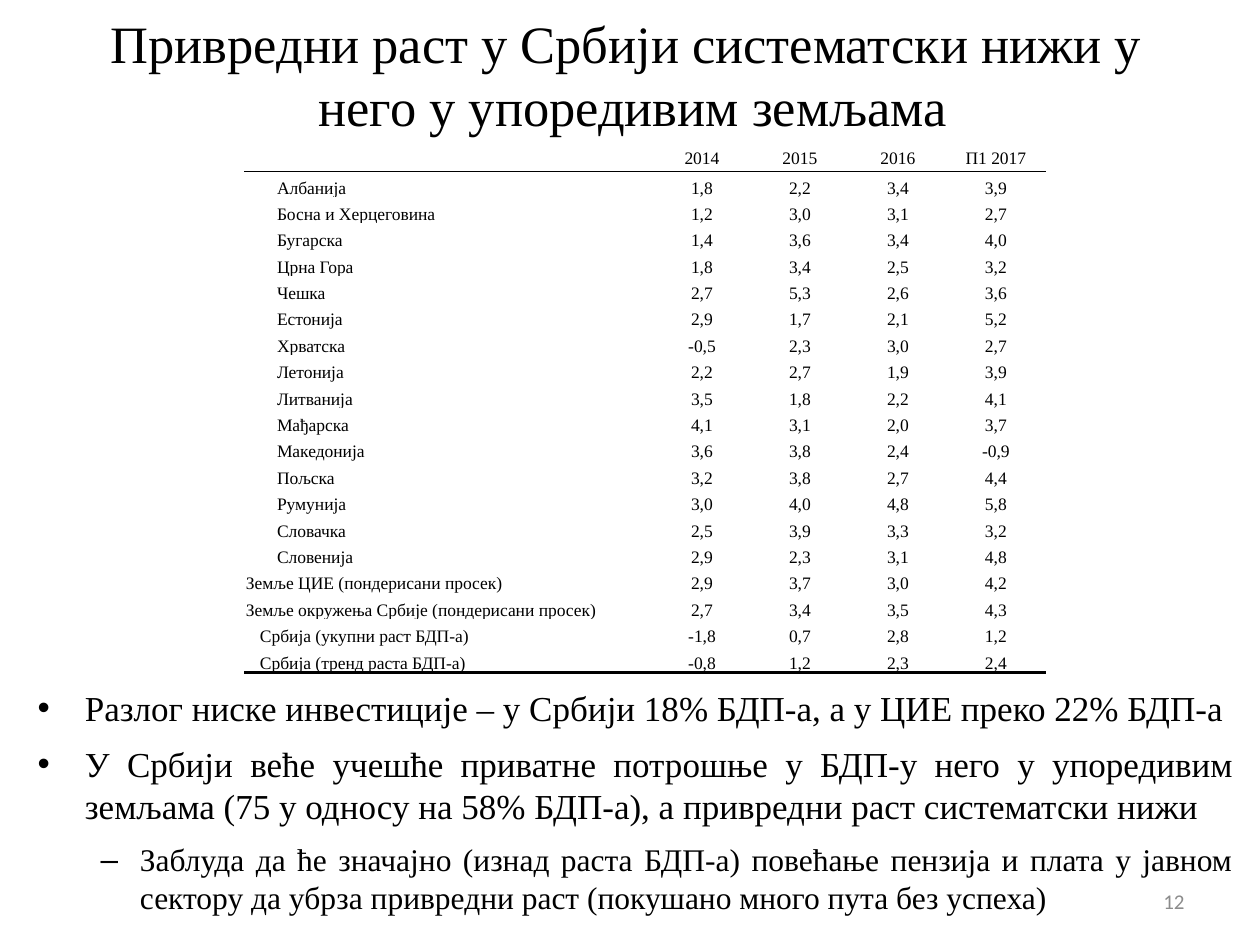
from lxml import etree
from pptx import Presentation
from pptx.dml.color import RGBColor
from pptx.enum.text import MSO_ANCHOR, MSO_AUTO_SIZE, PP_ALIGN
from pptx.oxml.ns import qn
from pptx.util import Pt

LEFT, CENTER, RIGHT, JUSTIFY = PP_ALIGN.LEFT, PP_ALIGN.CENTER, PP_ALIGN.RIGHT, PP_ALIGN.JUSTIFY
TOP, MIDDLE, BOTTOM = MSO_ANCHOR.TOP, MSO_ANCHOR.MIDDLE, MSO_ANCHOR.BOTTOM
PX = 914400 // 126

THEME = {
    "text": "000000", "paper": "FFFFFF", "muted": "8C8C8C",
    "serif": "Times New Roman", "sans": "Calibri",
    "title": 30, "bullets": [20, 18], "table": 10, "number": 12,
    "thin": 0.5, "thick": 2,
}

HEADER = ["", "2014", "2015", "2016", "П1 2017"]
COUNTRIES = [
    ("Албанија", "1,8 2,2 3,4 3,9"),
    ("Босна и Херцеговина", "1,2 3,0 3,1 2,7"),
    ("Бугарска", "1,4 3,6 3,4 4,0"),
    ("Црна Гора", "1,8 3,4 2,5 3,2"),
    ("Чешка", "2,7 5,3 2,6 3,6"),
    ("Естонија", "2,9 1,7 2,1 5,2"),
    ("Хрватска", "-0,5 2,3 3,0 2,7"),
    ("Летонија", "2,2 2,7 1,9 3,9"),
    ("Литванија", "3,5 1,8 2,2 4,1"),
    ("Мађарска", "4,1 3,1 2,0 3,7"),
    ("Македонија", "3,6 3,8 2,4 -0,9"),
    ("Пољска", "3,2 3,8 2,7 4,4"),
    ("Румунија", "3,0 4,0 4,8 5,8"),
    ("Словачка", "2,5 3,9 3,3 3,2"),
    ("Словенија", "2,9 2,3 3,1 4,8"),
]
AVERAGES = [
    ("Земље ЦИЕ (пондерисани просек)", "2,9 3,7 3,0 4,2"),
    ("Земље окружења Србије (пондерисани просек)", "2,7 3,4 3,5 4,3"),
]
SERBIA = [
    ("Србија (укупни раст БДП-а)", "-1,8 0,7 2,8 1,2"),
    ("Србија (тренд раста БДП-а)", "-0,8 1,2 2,3 2,4"),
]
BULLETS = [
    (0, "Разлог ниске инвестиције – у Србији 18% БДП-а, а у ЦИЕ преко 22% БДП-а"),
    (0, "У Србији веће учешће приватне потрошње у БДП-у него у упоредивим земљама "
        "(75 у односу на 58% БДП-а), а привредни раст систематски нижи"),
    (1, "Заблуда да ће значајно (изнад раста БДП-а) повећање пензија и плата у јавном "
        "сектору да убрза привредни раст (покушано много пута без успеха)"),
]


def write(p, text, size, align, font="serif", color="text"):
    p.text = text
    p.alignment = align
    for r in p.runs:
        r.font.size = Pt(size)
        r.font.name = THEME[font]
        r.font.color.rgb = RGBColor.from_string(THEME[color])


def rule(cell, side, width):
    """Draw one cell border; side is lnT or lnB."""
    ln = etree.Element(qn("a:" + side), w=str(Pt(width)))
    fill = etree.SubElement(ln, qn("a:solidFill"))
    etree.SubElement(fill, qn("a:srgbClr"), val=THEME["text"])
    cell._tc.get_or_add_tcPr().insert(0, ln)


prs = Presentation()
prs.slide_width, prs.slide_height = 1260 * PX, 945 * PX
s = prs.slides.add_slide(prs.slide_layouts[1])
title, body = s.placeholders
number = s.shapes.add_textbox(0, 0, 0, 0)

for sp, box, anchor in [
    (title, (25, 16, 1216, 116), MIDDLE),
    (body, (25, 680, 1221, 248), TOP),
    (number, (903, 876, 294, 50), MIDDLE),
]:
    sp.left, sp.top, sp.width, sp.height = [n * PX for n in box]
    tf = sp.text_frame
    for name, value in {"word_wrap": True, "auto_size": MSO_AUTO_SIZE.NONE,
                        "vertical_anchor": anchor}.items():
        setattr(tf, name, value)

write(title.text_frame.paragraphs[0],
      "Привредни раст у Србији систематски нижи у \vнего у упоредивим земљама",
      THEME["title"], CENTER)
write(number.text_frame.paragraphs[0], "12", THEME["number"], RIGHT, "sans", "muted")

tf = body.text_frame
for i, (level, text) in enumerate(BULLETS):
    p = tf.add_paragraph() if i else tf.paragraphs[0]
    write(p, text, THEME["bullets"][level], JUSTIFY)
    p.level = level
    p.space_before = p.space_after = Pt(4)

# Each row: its cells and the indent of its first cell in px
rows = [(HEADER, 1)]
for group, indent in [(COUNTRIES, 32), (AVERAGES, 1), (SERBIA, 15)]:
    rows += [([label, *values.split()], indent) for label, values in group]

widths = [408] + [98] * 4
height = 528 * PX
frame = s.shapes.add_table(len(rows), len(widths), 245 * PX, 145 * PX, sum(widths) * PX, height)
table = frame.table
table.first_row = table.horz_banding = False
for column, width in zip(table.columns, widths):
    column.width = width * PX

last = len(rows) - 1
for i, (texts, indent) in enumerate(rows):
    table.rows[i].height = height // len(rows)
    for j, text in enumerate(texts):
        cell = table.cell(i, j)
        for name, value in {"margin_left": (1 if j else indent) * PX, "margin_right": PX,
                            "margin_top": PX, "margin_bottom": 0,
                            "vertical_anchor": BOTTOM if i else MIDDLE}.items():
            setattr(cell, name, value)
        cell.fill.solid()
        cell.fill.fore_color.rgb = RGBColor.from_string(THEME["paper"])
        p = cell.text_frame.paragraphs[0]
        write(p, text, THEME["table"], CENTER if j else LEFT)
        if not text:
            etree.SubElement(p._p, qn("a:endParaRPr"), sz=str(THEME["table"] * 100))
        if i == 0:
            rule(cell, "lnB", THEME["thin"])
        elif i == 1:
            rule(cell, "lnT", THEME["thin"])
        elif i == last:
            rule(cell, "lnB", THEME["thick"])

prs.save("out.pptx")
